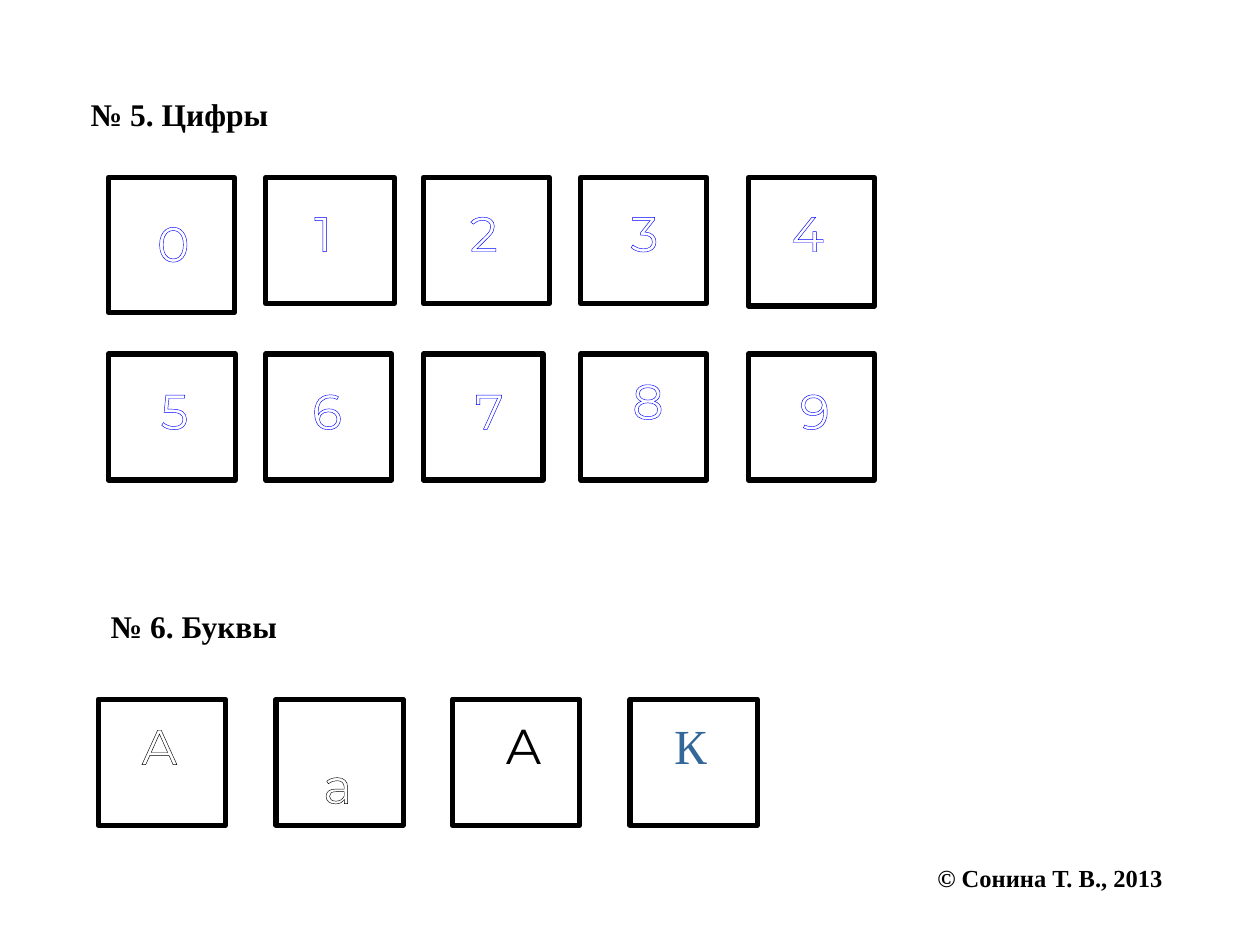
"""Build the slide with digit cards and letter cards."""
from dataclasses import dataclass

from lxml import etree
from pptx import Presentation
from pptx import util as u
from pptx.dml.color import RGBColor
from pptx.enum import shapes, text
from pptx.oxml.ns import qn

EMU_PER_PX = 9144
BLACK, WHITE, BLUE, STEEL = "000000", "FFFFFF", "0000FF", "336699"
SANS, SERIF = "Montserrat", "Times New Roman"


@dataclass(frozen=True)
class Box:
    left: int
    top: int
    width: int
    height: int


@dataclass(frozen=True)
class Card:
    symbol: str
    symbol_box: Box
    width: int = 100
    height: int = 100
    color: str = WHITE
    outline: str = BLUE
    font: str = SANS


DIGIT_LEFTS = (86, 211, 336, 461, 594)
LETTER_LEFTS = (78, 219, 359, 500)

LOW_DIGITS = (
    Card("0", Box(109, 164, 57, 68), height=107),
    Card("1", Box(234, 156, 45, 73), width=102),
    Card("2", Box(359, 156, 50, 68)),
    Card("3", Box(484, 156, 55, 68)),
    Card("4", Box(617, 156, 48, 72), height=102),
)
HIGH_DIGITS = (
    Card("5", Box(117, 297, 43, 72), width=101),
    Card("6", Box(234, 297, 51, 77)),
    Card("7", Box(367, 297, 41, 72), width=95),
    Card("8", Box(492, 289, 41, 76)),
    Card("9", Box(625, 297, 38, 73)),
)
LETTERS = (
    Card("А", Box(102, 563, 49, 85), 101, outline=BLACK),
    Card("а", Box(242, 594, 52, 46), 101, outline=BLACK),
    Card("А", Box(391, 563, 49, 85), 101, color=BLACK, outline=BLACK),
    Card("К", Box(523, 563, 50, 80), 101, color=STEEL, outline="", font=SERIF),
)
ROWS = (
    (141, DIGIT_LEFTS, LOW_DIGITS),
    (281, DIGIT_LEFTS, HIGH_DIGITS),
    (555, LETTER_LEFTS, LETTERS),
)


def px(length: int) -> u.Emu:
    """Turn pixels into EMU."""
    return u.Emu(length * EMU_PER_PX)


def rgb(value: str) -> RGBColor:
    """Turn a hex string into a colour."""
    return RGBColor.from_string(value)


def place(box: Box) -> tuple:
    """Give the position and size of a box in EMU."""
    return px(box.left), px(box.top), px(box.width), px(box.height)


def outline_run(run, color: str) -> None:
    """Draw a coloured contour around the letters of a run."""
    line = etree.Element(qn("a:ln"), w=str(u.Pt(2.25)))
    fill = etree.SubElement(line, qn("a:solidFill"))
    etree.SubElement(fill, qn("a:srgbClr"), val=color)
    run.font._element.insert(0, line)


def write(holder, words: str, size: int, color: str, font: str, align, bold=False):
    """Put one formatted line into a shape and return its run."""
    frame = holder.text_frame
    frame.text = words
    frame.word_wrap = False
    frame.vertical_anchor = text.MSO_ANCHOR.TOP
    paragraph = frame.paragraphs[0]
    paragraph.alignment = align
    run = paragraph.runs[0]
    run.font.size = u.Pt(size)
    run.font.name = font
    run.font.bold = bold
    run.font.color.rgb = rgb(color)
    return run


def draw_caption(holder, words: str, size: int, align=text.PP_ALIGN.LEFT) -> None:
    """Write a bold serif caption in a shape that fits its text."""
    write(holder, words, size, BLACK, SERIF, align, bold=True)
    holder.text_frame.auto_size = text.MSO_AUTO_SIZE.SHAPE_TO_FIT_TEXT


def draw_card(slide, card: Card, left: int, top: int) -> None:
    """Draw a framed card and its symbol."""
    frame = slide.shapes.add_shape(
        shapes.MSO_SHAPE.RECTANGLE, *place(Box(left, top, card.width, card.height)))
    frame.shadow.inherit = False
    frame.fill.solid()
    frame.fill.fore_color.rgb = rgb(WHITE)
    frame.line.color.rgb = rgb(BLACK)
    frame.line.width = u.Pt(3)
    symbol = slide.shapes.add_textbox(*place(card.symbol_box))
    run = write(symbol, card.symbol, 28, card.color, card.font, text.PP_ALIGN.CENTER)
    if card.outline:
        outline_run(run, card.outline)


def main() -> None:
    """Build and save the slide."""
    deck = Presentation()
    deck.slide_width, deck.slide_height = px(1000), px(750)
    slide = deck.slides.add_slide(deck.slide_layouts[5])

    digits_title = slide.shapes.title
    digits_title.left, digits_title.top, digits_title.width, digits_title.height = place(
        Box(62, 70, 163, 40))
    draw_caption(digits_title, "№ 5. Цифры", 18)

    for top, lefts, cards in ROWS:
        for left, card in zip(lefts, cards):
            draw_card(slide, card, left, top)

    letters_title = slide.shapes.add_textbox(*place(Box(78, 477, 154, 40)))
    draw_caption(letters_title, "№ 6. Буквы", 18)
    author = slide.shapes.add_textbox(*place(Box(734, 680, 201, 34)))
    draw_caption(author, "© Сонина Т. В., 2013", 14, text.PP_ALIGN.JUSTIFY)

    deck.save("out.pptx")


if __name__ == "__main__":
    main()
